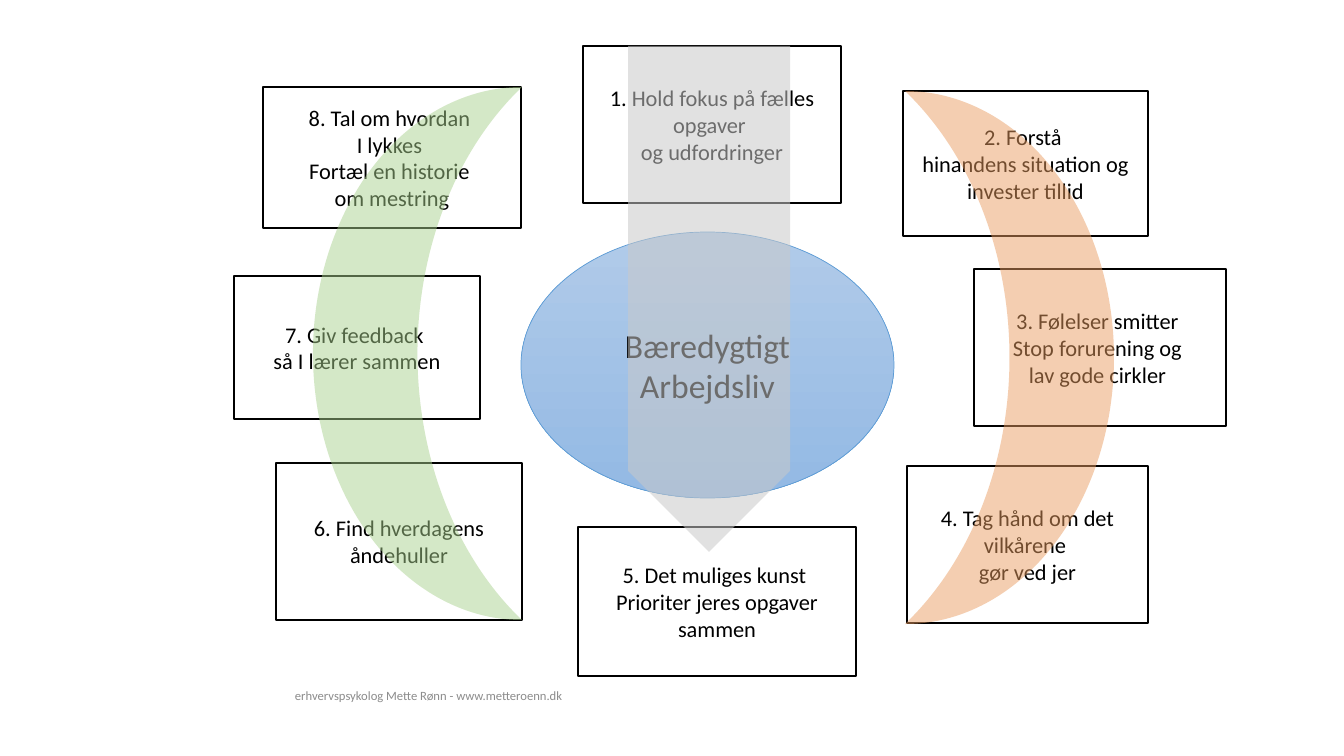
from lxml.etree import SubElement
from pptx import Presentation
from pptx.dml.color import RGBColor
from pptx.enum.shapes import MSO_SHAPE
from pptx.enum.text import MSO_ANCHOR, PP_ALIGN
from pptx.oxml.ns import qn
from pptx.util import Emu, Pt

FONT = "Calibri"

STEPS = [
    ((907, 466, 241, 157), None, "4. Tag hånd om det vilkårene \ngør ved jer"),
    ((578, 527, 278, 149), "FFFFFF",
     "5. Det muliges kunst \nPrioriter jeres opgaver sammen"),
    ((234, 276, 246, 143), None, "7. Giv feedback \nså I lærer sammen"),
    ((974, 269, 252, 157), None,
     "3. Følelser smitter \nStop forurening og \nlav gode cirkler "),
    ((903, 91, 245, 145), None,
     "2. Forstå \nhinandens situation og invester tillid"),
    ((263, 87, 258, 141), None,
     "8. Tal om hvordan \nI lykkes \nFortæl en historie \nom mestring"),
    ((583, 46, 258, 157), "FFFFFF",
     "1. Hold fokus på fælles opgaver \nog udfordringer"),
    ((276, 463, 246, 157), None, "6. Find hverdagens åndehuller"),
]

# preset, box, rotation, colour, opacity in percent
OVERLAYS = [
    (MSO_SHAPE.PENTAGON, (456, 218, 506, 162), 90, "C9C9C9", 54),
    (MSO_SHAPE.MOON, (313, 87, 209, 533), 0, "A9D18E", 49),
    (MSO_SHAPE.MOON, (905, 91, 209, 533), 180, "E99D61", 49),
]


def px(n):
    return Emu(round(n * 914400 / 100.8))


def rgb(color):
    return RGBColor.from_string(color)


def set_text(sp, text, size, color="000000", align=PP_ALIGN.CENTER):
    tf = sp.text_frame
    tf.word_wrap = True
    tf.vertical_anchor = MSO_ANCHOR.MIDDLE
    tf.text = text
    for p in tf.paragraphs:
        p.alignment = align
        for r in p.runs:
            r.font.name = FONT
            r.font.size = Pt(size)
            r.font.color.rgb = rgb(color)


def add_preset(s, preset, box, line=None, width=1):
    sp = s.shapes.add_shape(preset, *map(px, box))
    sp.shadow.inherit = False
    if line:
        sp.line.color.rgb = rgb(line)
        sp.line.width = Pt(width)
    else:
        sp.line.fill.background()
    return sp


def add_step(s, box, fill, text):
    sp = add_preset(s, MSO_SHAPE.RECTANGLE, box, "000000")
    if fill:
        sp.fill.solid()
        sp.fill.fore_color.rgb = rgb(fill)
    else:
        sp.fill.background()
    set_text(sp, text, 16)


def add_core(s, box):
    sp = add_preset(s, MSO_SHAPE.OVAL, box, "5B9BD5", 0.5)
    sp.fill.gradient()
    sp.fill.gradient_angle = 270
    for stop, color in zip(sp.fill.gradient_stops, ("B1CBE9", "93B9E4")):
        stop.color.rgb = rgb(color)
    set_text(sp, "Bæredygtigt Arbejdsliv", 24)


def add_overlay(s, preset, box, rotation, color, opacity):
    sp = add_preset(s, preset, box)
    sp.rotation = rotation
    sp.fill.solid()
    sp.fill.fore_color.rgb = rgb(color)
    clr = sp.fill._xPr.find(qn("a:solidFill"))[0]
    SubElement(clr, qn("a:alpha")).set("val", str(opacity * 1000))


def add_footer(s, box):
    sp = s.shapes.add_textbox(*map(px, box))
    set_text(sp, "erhvervspsykolog Mette Rønn - www.metteroenn.dk", 9,
             "8C8C8C", PP_ALIGN.LEFT)


def main():
    prs = Presentation()
    prs.slide_width, prs.slide_height = px(1344), px(756)
    s = prs.slides.add_slide(prs.slide_layouts[6])
    add_footer(s, (285, 676, 840, 40))
    for step in STEPS:
        add_step(s, *step)
    add_core(s, (521, 232, 373, 266))
    for overlay in OVERLAYS:
        add_overlay(s, *overlay)
    prs.save("out.pptx")


if __name__ == "__main__":
    main()
